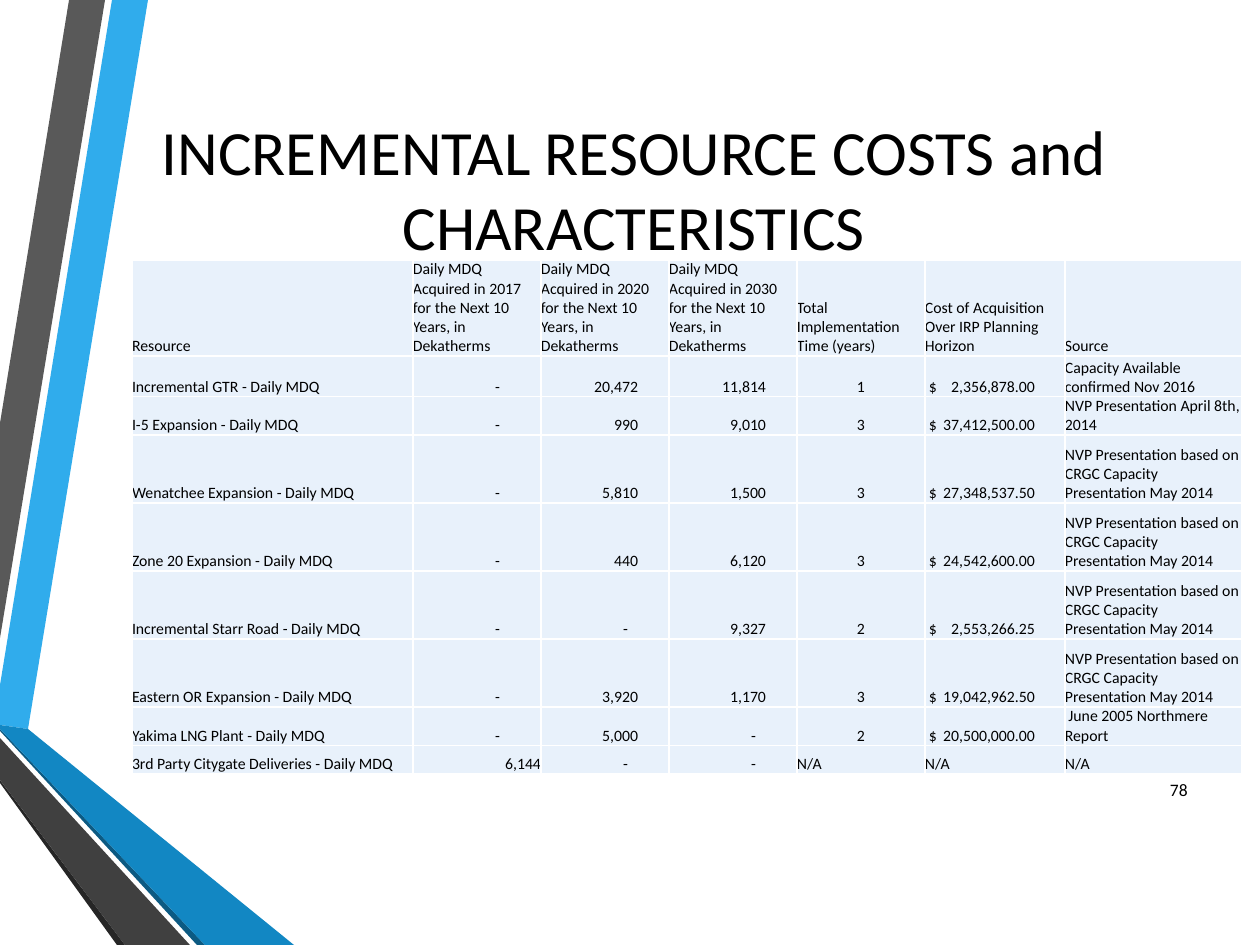
import dataclasses

import lxml.etree
import pptx
import pptx.dml.color
import pptx.enum.text
import pptx.oxml
import pptx.oxml.ns
import pptx.presentation
import pptx.slide
import pptx.table
import pptx.text.text
import pptx.util

RGB = pptx.dml.color.RGBColor
ALIGN = pptx.enum.text.PP_ALIGN
ANCHOR = pptx.enum.text.MSO_ANCHOR
qn = pptx.oxml.ns.qn

EMU_PER_PX = 7257
FONT = "Calibri"
BLACK = RGB(0x00, 0x00, 0x00)
WHITE = RGB(0xFF, 0xFF, 0xFF)
PALE_BLUE = RGB(0xE8, 0xF1, 0xFB)
SKY = RGB(0x30, 0xAC, 0xEC)
GRAY = RGB(0x59, 0x59, 0x59)
CHARCOAL = RGB(0x26, 0x26, 0x26)
NAVY = RGB(0x0C, 0x5A, 0x82)
BLUE = RGB(0x12, 0x87, 0xC3)
DARK_GRAY = RGB(0x40, 0x40, 0x40)


@dataclasses.dataclass(frozen=True)
class Ribbon:
    color: RGB
    points: tuple[tuple[int, int], ...]


@dataclasses.dataclass(frozen=True)
class Resource:
    name: str
    quantities: tuple[str, str, str]
    years: str
    cost: str
    source: str
    height: int


@dataclasses.dataclass(frozen=True)
class CellStyle:
    align: ALIGN = ALIGN.LEFT
    left: int = 0
    right: int = 0
    tab: int = 0


LABEL = CellStyle()
CENTERED = CellStyle(ALIGN.CENTER)
FLUSH_RIGHT = CellStyle(ALIGN.RIGHT)
QUANTITY = CellStyle(ALIGN.RIGHT, right=31)
DASH = CellStyle(ALIGN.RIGHT, right=41)
COST = CellStyle(left=4, tab=106)

RIBBONS = (
    Ribbon(SKY, ((0, 685), (0, 725), (28, 729), (148, 0), (112, 0))),
    Ribbon(GRAY, ((105, 0), (69, 0), (0, 423), (0, 638))),
    Ribbon(CHARCOAL, ((0, 780), (0, 783), (117, 945), (125, 945))),
    Ribbon(NAVY, ((0, 729), (0, 731), (197, 945), (205, 945))),
    Ribbon(BLUE, ((0, 729), (205, 945), (294, 945), (28, 729), (0, 725))),
    Ribbon(DARK_GRAY, ((0, 780), (125, 945), (190, 945), (0, 738))),
)
COLUMN_WIDTHS = (281, 128, 128, 128, 128, 140, 177)
HEADER_HEIGHT = 95
HEADERS = (
    "Resource",
    *(f"Daily MDQ Acquired in {year} for the Next 10 Years, in Dekatherms"
      for year in (2017, 2020, 2030)),
    "Total Implementation Time (years)",
    "Cost of Acquisition Over IRP Planning Horizon",
    "Source",
)
CAPACITY = "NVP Presentation based on CRGC Capacity Presentation May 2014"
RESOURCES = (
    Resource("Incremental GTR", ("-", "20,472", "11,814"), "1", "2,356,878.00",
             "Capacity Available confirmed Nov 2016", 41),
    Resource("I-5 Expansion", ("-", "990", "9,010"), "3", "37,412,500.00",
             "NVP Presentation April 8th, 2014", 38),
    Resource("Wenatchee Expansion", ("-", "5,810", "1,500"), "3", "27,348,537.50", CAPACITY, 68),
    Resource("Zone 20 Expansion", ("-", "440", "6,120"), "3", "24,542,600.00", CAPACITY, 68),
    Resource("Incremental Starr Road", ("-", "-", "9,327"), "2", "2,553,266.25", CAPACITY, 68),
    Resource("Eastern OR Expansion", ("-", "3,920", "1,170"), "3", "19,042,962.50", CAPACITY, 68),
    Resource("Yakima LNG Plant", ("-", "5,000", "-"), "2", "20,500,000.00",
             " June 2005 Northmere Report", 38),
    Resource("3rd Party Citygate Deliveries", ("6,144", "-", "-"), "N/A", "N/A", "N/A", 28),
)


def px(length: int) -> pptx.util.Emu:
    return pptx.util.Emu(length * EMU_PER_PX)


def write(frame: pptx.text.text.TextFrame, text: str, size: int, align: ALIGN) -> None:
    frame.text = text
    frame.word_wrap = True
    paragraph = frame.paragraphs[0]
    paragraph.alignment = align
    paragraph.font.name = FONT
    paragraph.font.size = pptx.util.Pt(size)
    paragraph.font.color.rgb = BLACK


def draw_ribbon(slide: pptx.slide.Slide, ribbon: Ribbon) -> None:
    start, *rest = ribbon.points
    builder = slide.shapes.build_freeform(*start, scale=EMU_PER_PX)
    builder.add_line_segments(rest, close=True)
    shape = builder.convert_to_shape()
    shape.shadow.inherit = False
    shape.fill.solid()
    shape.fill.fore_color.rgb = ribbon.color
    shape.line.fill.background()


def add_borders(cell: pptx.table._Cell) -> None:
    properties = cell._tc.get_or_add_tcPr()
    for position, side in enumerate(("a:lnL", "a:lnR", "a:lnT", "a:lnB")):
        border = lxml.etree.Element(qn(side), w=str(pptx.util.Pt(1)))
        fill = lxml.etree.SubElement(border, qn("a:solidFill"))
        lxml.etree.SubElement(fill, qn("a:srgbClr"), val=str(WHITE))
        properties.insert(position, border)


def add_right_tab(paragraph: pptx.text.text._Paragraph, position: int) -> None:
    properties = paragraph._p.get_or_add_pPr()
    stops = lxml.etree.Element(qn("a:tabLst"))
    lxml.etree.SubElement(stops, qn("a:tab"), pos=str(px(position)), algn="r")
    properties.insert(0, stops)


def fill_cell(cell: pptx.table._Cell, text: str, style: CellStyle) -> None:
    cell.margin_left, cell.margin_right = px(style.left), px(style.right)
    cell.margin_top = cell.margin_bottom = 0
    cell.vertical_anchor = ANCHOR.BOTTOM
    cell.fill.solid()
    cell.fill.fore_color.rgb = PALE_BLUE
    add_borders(cell)
    write(cell.text_frame, text, 9, style.align)
    if style.tab:
        add_right_tab(cell.text_frame.paragraphs[0], style.tab)


def resource_cells(resource: Resource) -> list[tuple[str, CellStyle]]:
    available = resource.cost != "N/A"
    quantity_style = QUANTITY if available else FLUSH_RIGHT
    return [
        (f"{resource.name} - Daily MDQ", LABEL),
        *((value, DASH if value == "-" else quantity_style) for value in resource.quantities),
        (resource.years, CENTERED if available else LABEL),
        (f"$\t{resource.cost}", COST) if available else (resource.cost, LABEL),
        (resource.source, LABEL),
    ]


def draw_cost_table(slide: pptx.slide.Slide) -> None:
    heights = [HEADER_HEIGHT, *(resource.height for resource in RESOURCES)]
    rows = [[(header, LABEL) for header in HEADERS], *map(resource_cells, RESOURCES)]
    table = slide.shapes.add_table(
        len(rows), len(COLUMN_WIDTHS), px(132), px(260), px(sum(COLUMN_WIDTHS)), px(sum(heights))
    ).table
    for column, width in zip(table.columns, COLUMN_WIDTHS):
        column.width = px(width)
    for row, height, contents in zip(table.rows, heights, rows):
        row.height = px(height)
        for cell, (text, style) in zip(row.cells, contents):
            fill_cell(cell, text, style)


def draw_title(slide: pptx.slide.Slide) -> None:
    title = slide.shapes.title
    title.left, title.top, title.width, title.height = px(116), px(161), px(1036), px(54)
    frame = title.text_frame
    write(frame, "INCREMENTAL RESOURCE COSTS and CHARACTERISTICS", 36, ALIGN.CENTER)
    frame.auto_size = pptx.enum.text.MSO_AUTO_SIZE.NONE
    frame.vertical_anchor = ANCHOR.MIDDLE


def draw_page_number(slide: pptx.slide.Slide) -> None:
    frame = slide.shapes.add_textbox(px(1143), px(771), px(57), px(38)).text_frame
    write(frame, "78", 10, ALIGN.RIGHT)
    frame.vertical_anchor = ANCHOR.MIDDLE


def main() -> None:
    """Build the resource cost slide."""
    presentation = pptx.Presentation()
    presentation.slide_width, presentation.slide_height = px(1260), px(945)
    slide = presentation.slides.add_slide(presentation.slide_layouts[5])
    for ribbon in RIBBONS:
        draw_ribbon(slide, ribbon)
    draw_title(slide)
    draw_cost_table(slide)
    draw_page_number(slide)
    presentation.save("out.pptx")


if __name__ == "__main__":
    main()
